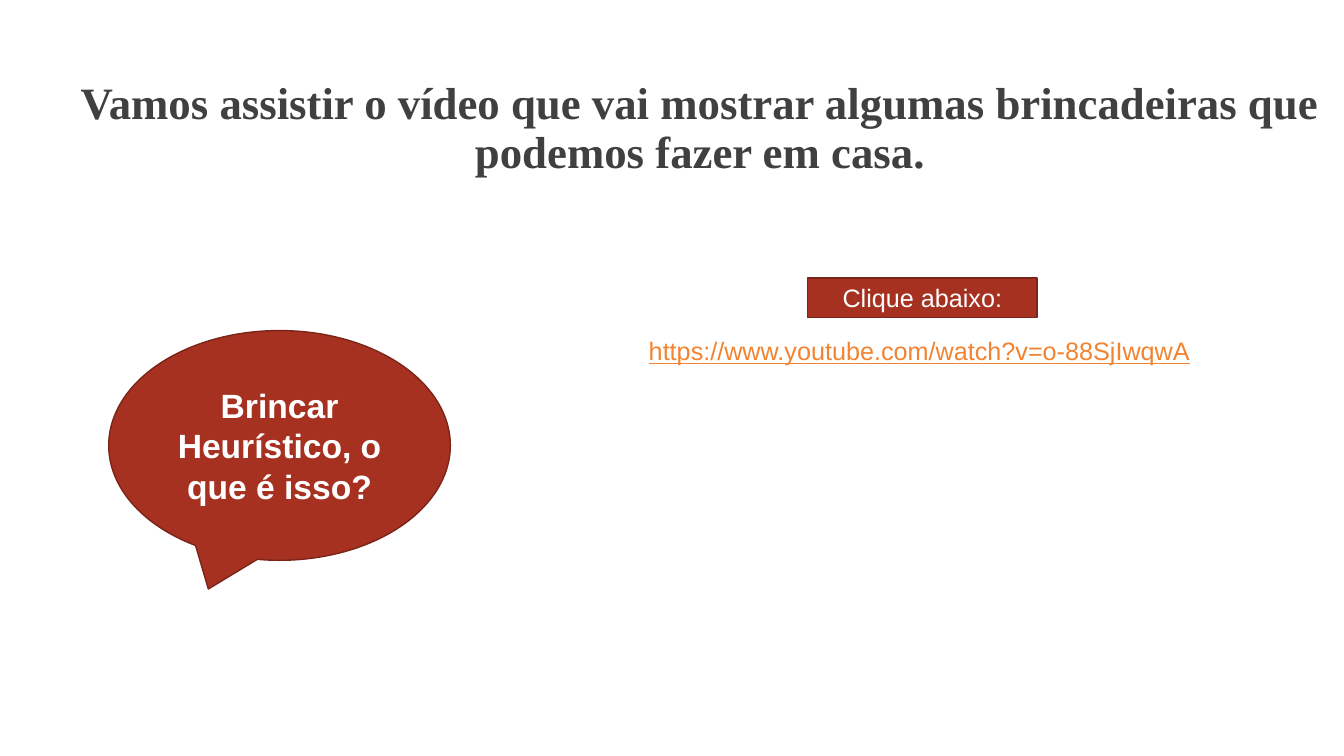
from pptx import Presentation
from pptx.dml.color import RGBColor
from pptx.enum.shapes import MSO_SHAPE
from pptx.enum.text import MSO_ANCHOR, MSO_AUTO_SIZE, PP_ALIGN
from pptx.util import Cm, Pt

RECTANGLE = MSO_SHAPE.RECTANGLE
SPEECH_BUBBLE = MSO_SHAPE.OVAL_CALLOUT
CENTER = PP_ALIGN.CENTER
MIDDLE = MSO_ANCHOR.MIDDLE
BOTTOM = MSO_ANCHOR.BOTTOM
GROW_TO_TEXT = MSO_AUTO_SIZE.SHAPE_TO_FIT_TEXT

RED = RGBColor(0xA6, 0x31, 0x21)
DARK_RED = RGBColor(0x7B, 0x24, 0x18)
ORANGE = RGBColor(0xF2, 0x83, 0x30)
GRAY = RGBColor(0x40, 0x40, 0x40)
WHITE = RGBColor(0xFF, 0xFF, 0xFF)


def write(frame, text, size, color, font="Arial", bold=False, underline=False):
    """Add one run to the first paragraph of the frame and return the paragraph."""
    paragraph = frame.paragraphs[0]
    run = paragraph.add_run()
    run.text = text
    run.font.name = font
    run.font.size = Pt(size)
    run.font.color.rgb = color
    run.font.bold = bold
    run.font.underline = underline
    return paragraph


def add_title(slide, text):
    title = slide.shapes.add_textbox(Cm(0.94), Cm(-0.86), Cm(33.4), Cm(6.71))
    frame = title.text_frame
    frame.word_wrap = True
    frame.vertical_anchor = BOTTOM
    frame.margin_bottom = Cm(1.37)
    paragraph = write(frame, text, 32, GRAY, "Times New Roman", bold=True)
    paragraph.alignment = CENTER
    paragraph.line_spacing = 0.9


def add_video_address(slide, address):
    box = slide.shapes.add_textbox(Cm(16.1), Cm(8.33), Cm(14.27), Cm(1.8))
    frame = box.text_frame
    frame.word_wrap = False
    frame.auto_size = GROW_TO_TEXT
    write(frame, address, 18, ORANGE, underline=True)


def add_red_shape(slide, outline, left, top, width, height, text, size, bold=False):
    shape = slide.shapes.add_shape(outline, Cm(left), Cm(top), Cm(width), Cm(height))
    shape.shadow.inherit = False
    shape.fill.solid()
    shape.fill.fore_color.rgb = RED
    shape.line.color.rgb = DARK_RED
    shape.line.width = Pt(1)
    frame = shape.text_frame
    frame.word_wrap = True
    frame.vertical_anchor = MIDDLE
    write(frame, text, size, WHITE, bold=bold).alignment = CENTER


def main():
    deck = Presentation()
    deck.slide_width = Cm(33.87)
    deck.slide_height = Cm(19.05)
    slide = deck.slides.add_slide(deck.slide_layouts[6])

    add_title(slide, "Vamos assistir o vídeo que vai mostrar algumas "
                     "brincadeiras que podemos fazer em casa.")
    add_video_address(slide, "https://www.youtube.com/watch?v=o-88SjIwqwA")
    add_red_shape(slide, SPEECH_BUBBLE, 2.74, 8.33, 8.61, 5.79,
                  "Brincar Heurístico, o que é isso?", 24, bold=True)
    add_red_shape(slide, RECTANGLE, 20.35, 7.01, 5.79, 0.99, "Clique abaixo:", 18)

    deck.save("out.pptx")


if __name__ == "__main__":
    main()
